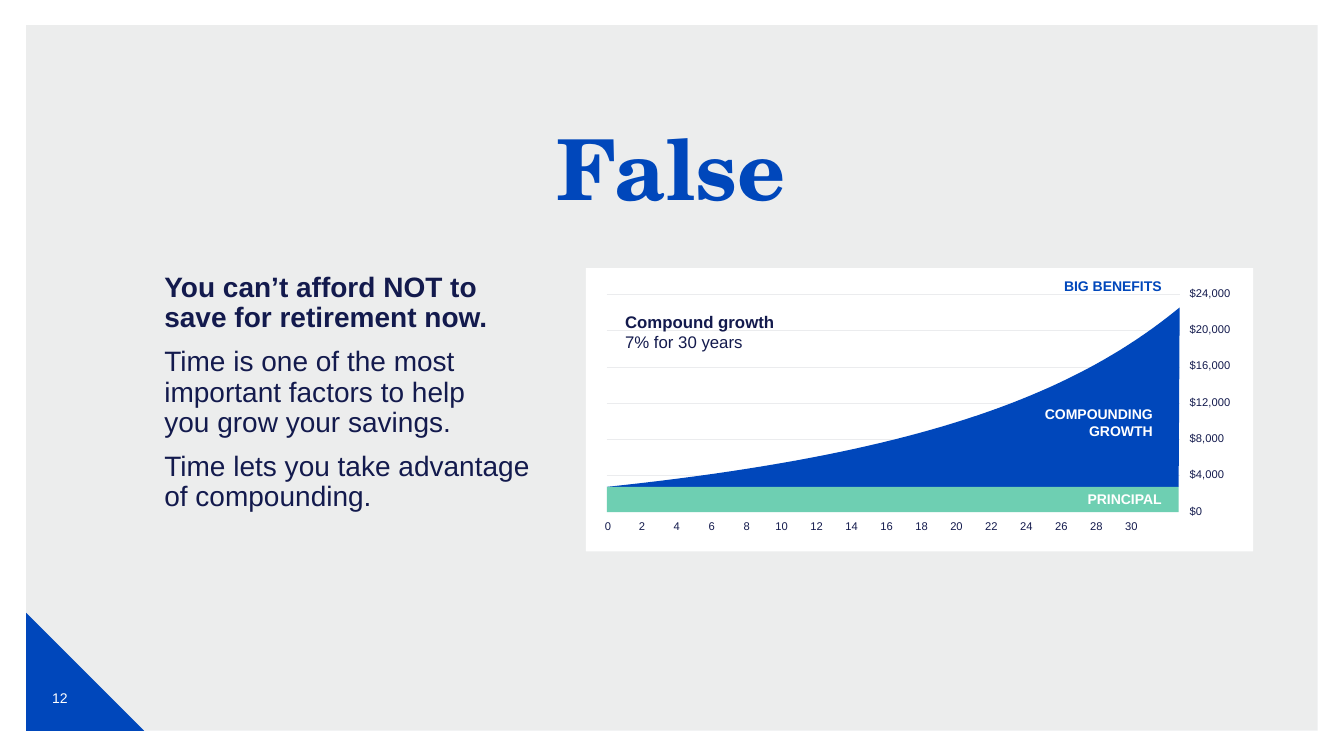
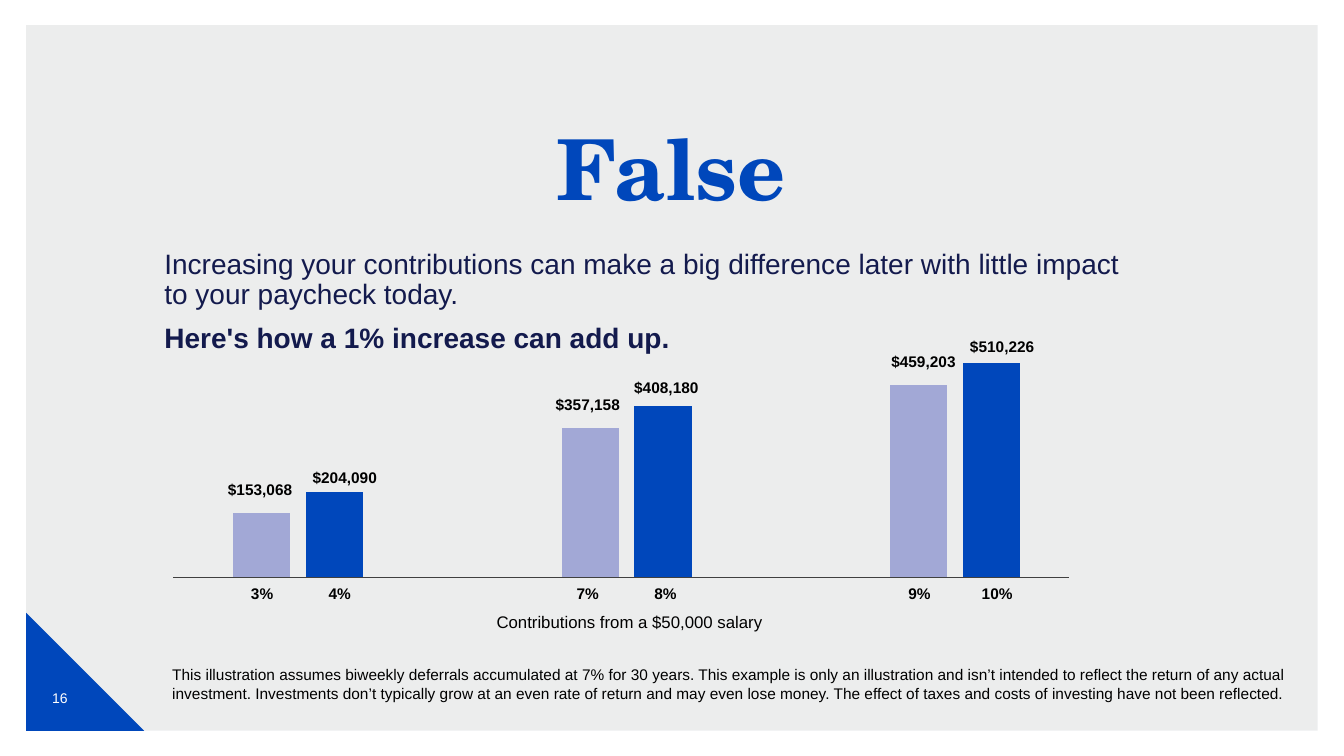
from lxml import etree
from pptx import Presentation
from pptx.chart.data import CategoryChartData
from pptx.dml.color import RGBColor
from pptx.enum.chart import XL_CHART_TYPE
from pptx.enum.shapes import MSO_CONNECTOR, MSO_SHAPE
from pptx.enum.text import MSO_ANCHOR, PP_ALIGN
from pptx.oxml.ns import qn
from pptx.util import Inches, Pt

LEFT, CENTER, RIGHT = PP_ALIGN.LEFT, PP_ALIGN.CENTER, PP_ALIGN.RIGHT
TOP, MIDDLE = MSO_ANCHOR.TOP, MSO_ANCHOR.MIDDLE
RECTANGLE, TRIANGLE = MSO_SHAPE.RECTANGLE, MSO_SHAPE.RIGHT_TRIANGLE
STRAIGHT = MSO_CONNECTOR.STRAIGHT
COLUMNS = XL_CHART_TYPE.COLUMN_CLUSTERED

COLORS = {
    "panel": "D0D3D4",
    "blue": "0047BB",
    "deep blue": "003B9B",
    "navy": "131A4D",
    "lavender": "A2A8D6",
    "green": "6ECFB2",
    "grid": "EBECEE",
    "baseline": "404040",
    "white": "FFFFFF",
    "black": "000000",
}
BODY_FONT = "Arial"
TITLE_FONT = "TeX Gyre Schola"
NO_BREAK = chr(160)  # space that keeps two words on one line
FLUSH = (0, 0.05, 0, 0.05)
LABEL = (0, 0.05, 0.1, 0.05)
PADDED = (0.1, 0.05, 0.1, 0.05)


def color(name):
    return RGBColor.from_string(COLORS[name])


def write_text(frame, text, size=20, font=BODY_FONT, fill="navy", bold=False,
               align=LEFT, line_spacing=None, gap=0, tabs=()):
    """Write one paragraph per line; bold is a flag or one flag per line."""
    lines = text.split("\n")
    flags = bold if isinstance(bold, tuple) else (bold,) * len(lines)
    for index, (line, flag) in enumerate(zip(lines, flags)):
        paragraph = frame.add_paragraph() if index else frame.paragraphs[0]
        if tabs:
            tab_list = etree.SubElement(paragraph._p.get_or_add_pPr(), qn("a:tabLst"))
            for position in tabs:
                etree.SubElement(tab_list, qn("a:tab"), pos=str(Inches(position)), algn="ctr")
        paragraph.alignment = align
        if line_spacing:
            paragraph.line_spacing = line_spacing
        if index and gap:
            paragraph.space_before = Pt(gap)
        run = paragraph.add_run()
        run.text = line
        run.font.name = font
        run.font.size = Pt(size)
        run.font.bold = flag
        run.font.color.rgb = color(fill)


class Deck:
    def __init__(self):
        self.presentation = Presentation()
        self.presentation.slide_width = Inches(13.33)
        self.presentation.slide_height = Inches(7.5)
        self.slide = None

    def add_slide(self, title, number):
        """Start a slide with the shared panel, corner, number and title."""
        self.slide = self.presentation.slides.add_slide(self.presentation.slide_layouts[6])
        panel = self.shape(RECTANGLE, 0.26, 0.25, 12.81, 7, "panel")
        panel_color = panel._element.spPr.find(qn("a:solidFill"))[0]
        etree.SubElement(panel_color, qn("a:alpha"), val="40000")
        self.shape(TRIANGLE, 0.26, 6.08, 1.17, 1.17, "blue")
        self.text(str(number), 0.32, 6.63, 0.55, 0.58, anchor=MIDDLE,
                  size=10, fill="white", align=CENTER)
        self.text(title, 1.63, 1.22, 10.06, 0.67, insets=FLUSH, size=60,
                  font=TITLE_FONT, fill="blue", bold=True, align=CENTER, line_spacing=0.9)

    def paint(self, shape, fill):
        shape.shadow.inherit = False
        shape.fill.solid()
        shape.fill.fore_color.rgb = color(fill)
        shape.line.fill.background()
        return shape

    def shape(self, kind, left, top, width, height, fill):
        shape = self.slide.shapes.add_shape(
            kind, Inches(left), Inches(top), Inches(width), Inches(height))
        return self.paint(shape, fill)

    def outline(self, points, fill):
        corners = [(Inches(x), Inches(y)) for x, y in points]
        builder = self.slide.shapes.build_freeform(*corners[0])
        builder.add_line_segments(corners[1:], close=True)
        return self.paint(builder.convert_to_shape(), fill)

    def text(self, text, left, top, width, height, insets=PADDED, anchor=TOP, **style):
        box = self.slide.shapes.add_textbox(
            Inches(left), Inches(top), Inches(width), Inches(height))
        frame = box.text_frame
        frame.word_wrap = True
        frame.vertical_anchor = anchor
        (frame.margin_left, frame.margin_top,
         frame.margin_right, frame.margin_bottom) = map(Inches, insets)
        write_text(frame, text, **style)

    def body(self, text, left, top, width, height, bold):
        self.text(text, left, top, width, height, insets=FLUSH,
                  bold=bold, line_spacing=0.9, gap=10)

    def label(self, text, left, top, width, height, **style):
        self.text(text, left, top, width, height, insets=LABEL, anchor=MIDDLE, **style)

    def rule(self, left, right, y, line_color):
        line = self.slide.shapes.add_connector(
            STRAIGHT, Inches(left), Inches(y), Inches(right), Inches(y))
        line.line.color.rgb = color(line_color)
        line.line.width = Pt(0.5)
        etree.SubElement(line._element.spPr, qn("a:effectLst"))

    def columns(self, left, top, width, height, categories, series, maximum):
        data = CategoryChartData()
        data.categories = categories
        for name, values, _ in series:
            data.add_series(name, values)
        chart = self.slide.shapes.add_chart(
            COLUMNS, Inches(left), Inches(top), Inches(width), Inches(height), data).chart
        chart.has_legend = False
        chart.has_title = False
        chart.font.name = BODY_FONT
        chart.font.size = Pt(10)
        chart.font.color.rgb = color("navy")
        chart.value_axis.minimum_scale = 0
        chart.value_axis.maximum_scale = maximum
        chart.value_axis.has_major_gridlines = False
        chart.value_axis.visible = False
        chart.category_axis.visible = False
        plot = chart.plots[0]
        plot.vary_by_categories = False
        plot.gap_width = 219
        plot.overlap = -27
        for column, (_, _, fill) in zip(plot.series, series):
            column.format.fill.solid()
            column.format.fill.fore_color.rgb = color(fill)
        # Let the plot fill the whole frame
        plot_area = chart._chartSpace.chart.plotArea
        layout = plot_area.find(qn("c:layout"))
        if layout is None:
            layout = etree.Element(qn("c:layout"))
            plot_area.insert(0, layout)
        manual = etree.SubElement(layout, qn("c:manualLayout"))
        for tag, value in (("layoutTarget", "inner"), ("xMode", "edge"), ("yMode", "edge"),
                           ("x", "0"), ("y", "0"), ("w", "1"), ("h", "1")):
            etree.SubElement(manual, qn("c:" + tag), val=value)


def bezier(start, control_1, control_2, end, steps=48):
    """Points along a cubic curve."""
    points = []
    for step in range(steps + 1):
        t = step / steps
        weights = ((1 - t) ** 3, 3 * t * (1 - t) ** 2, 3 * t * t * (1 - t), t ** 3)
        points.append(tuple(
            sum(weight * value for weight, value in zip(weights, values))
            for values in zip(start, control_1, control_2, end)))
    return points


def add_compounding_slide(deck):
    deck.add_slide("False", 12)
    savings = NO_BREAK.join(["you", "grow", "your", "savings."])
    deck.body("You can’t afford NOT to save for retirement now.\n"
              f"Time is one of the most important factors to help {savings}\n"
              "Time lets you take advantage of compounding.",
              1.63, 2.66, 3.63, 2.81, bold=(True, False, False))
    deck.shape(RECTANGLE, 5.81, 2.66, 6.62, 2.81, "white")

    # Axes: amounts on the right, years below
    step = 0.36
    for index, amount in enumerate(range(24000, -1, -4000)):
        deck.label(f"${amount:,}", 11.8, 2.76 + index * step, 0.63, 0.29, size=8)
        if amount:
            deck.rule(6.02, 11.7, 2.92 + index * step, "grid")
    year_step = 5.2 / 15
    deck.label("\t".join(str(year) for year in range(0, 31, 2)), 6, 5.11, 5.85, 0.21,
               size=8, tabs=[0.02 + index * year_step for index in range(1, 16)])

    # Growth above the principal
    curve = bezier((6.02, 4.83), (9.06, 4.51), (10.62, 3.94), (11.7, 3.05))
    deck.outline(curve + [(11.69, 4.83)], "blue")
    deck.shape(RECTANGLE, 6.02, 4.83, 5.67, 0.25, "green")

    # Captions
    for caption, left, top, width, fill in (
            ("COMPOUNDING GROWTH", 10.31, 3.91, 1.22, "white"),
            ("PRINCIPAL", 10.49, 4.66, 1.13, "white"),
            ("BIG BENEFITS", 10.49, 2.55, 1.13, "blue")):
        deck.label(caption, left, top, width, 0.57, size=10, fill=fill, bold=True, align=RIGHT)
    deck.label("Compound growth\n7% for 30 years", 6.2, 2.87, 1.74, 0.85,
               size=12, bold=(True, False))


def add_contribution_slide(deck):
    deck.add_slide("False", 16)
    deck.body("Increasing your contributions can make a big difference later "
              "with little impact to your paycheck today.\n"
              "Here's how a 1% increase can add up.",
              1.63, 2.43, 9.56, 1.2, bold=(False, True))
    deck.text("This illustration assumes biweekly deferrals accumulated at 7% for 30 years. "
              "This example is only an illustration and isn’t intended to reflect the return "
              "of any actual investment. Investments don’t typically grow at an even rate of "
              "return and may even lose money. The effect of taxes and costs of investing have "
              "not been reflected.", 1.61, 6.55, 11.25, 0.47, size=11, fill="black")

    # Columns and baseline
    deck.columns(1.69, 3.18, 13.03, 2.55, ["1", "2", "3"],
                 [("Series 1", (30, 70, 90, None), "lavender"),
                  ("Series 2", (40, 80, 100, None), "blue"),
                  ("Series 3", (None,) * 4, "deep blue")], maximum=120)
    deck.rule(1.72, 10.6, 5.73, "baseline")
    deck.text("Contributions from a $50,000 salary", 1.91, 6.02, 8.67, 0.3,
              size=12, fill="black", align=CENTER)

    # Amount over each column (centre, top) and rate below it (left)
    small = {"size": 11, "fill": "black", "bold": True, "align": CENTER}
    width = 0.9
    for amount, centre, top, rate, rate_left in (
            ("$153,068", 2.58, 4.71, "3%", 2.24),
            ("$204,090", 3.42, 4.59, "4%", 3.01),
            ("$357,158", 5.83, 3.87, "7%", 5.47),
            ("$408,180", 6.61, 3.7, "8%", 6.24),
            ("$459,203", 9.16, 3.44, "9%", 8.76),
            ("$510,226", 9.94, 3.29, "10%", 9.53)):
        deck.text(amount, centre - width / 2, top, width, 0.29, **small)
        deck.text(rate, rate_left, 5.75, 0.72, 0.29, **small)


def main():
    deck = Deck()
    add_compounding_slide(deck)
    add_contribution_slide(deck)
    deck.presentation.save("out.pptx")


if __name__ == "__main__":
    main()
